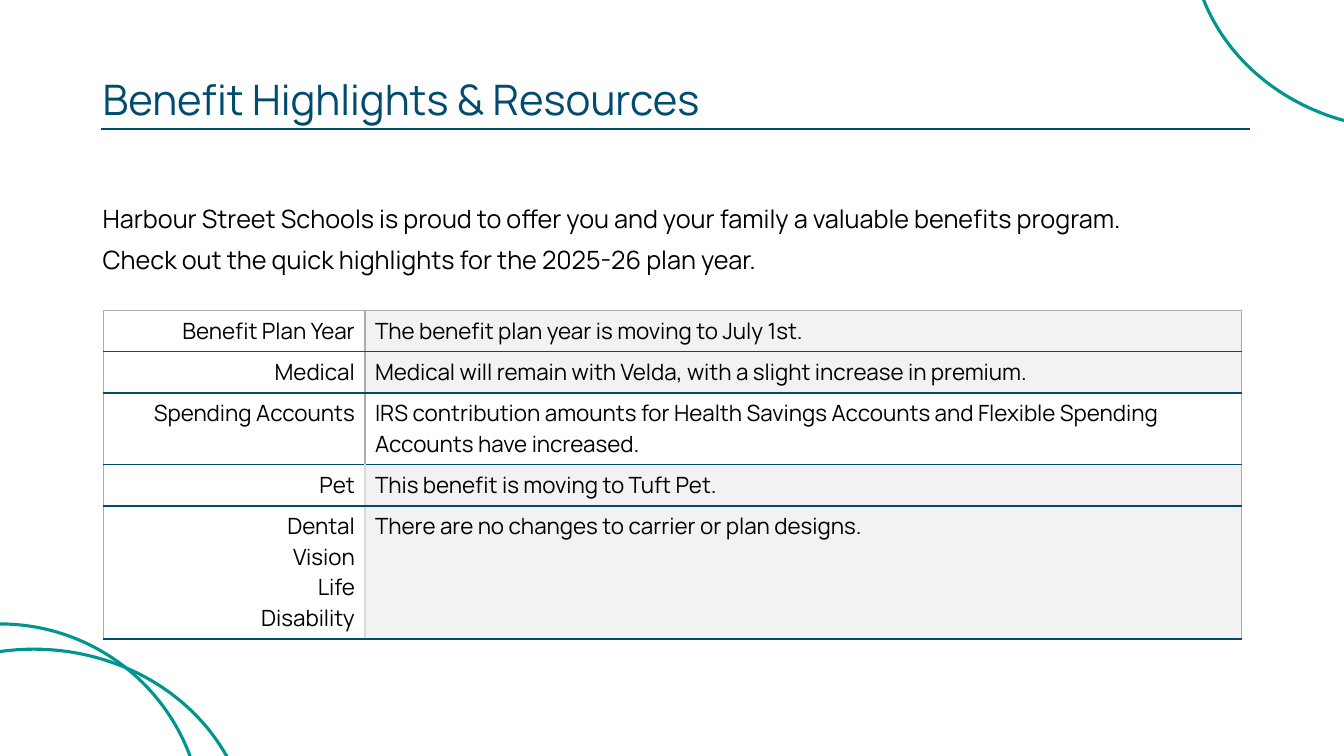
from lxml import etree
from pptx import Presentation
from pptx import util as u
from pptx.dml.color import RGBColor
from pptx.enum import shapes, text
from pptx.oxml.ns import qn

COLORS = {"navy": "004C6C", "teal": "00968F", "black": "000000",
          "grey": "AFABAB", "pale": "D9D9D9", "shade": "F2F2F2"}
FONT = "Manrope"
TITLE = "Benefit Highlights & Resources"
INTRO = [
    "Harbour Street Schools is proud to offer you and your family a valuable benefits program.",
    "Check out the quick highlights for the 2025-26 plan year.",
]
# row height, labels, highlight, highlight is shaded, colour of the divider between them
BENEFITS = [
    (0.41, ["Benefit Plan Year"], "The benefit plan year is moving to July 1st.", True, "grey"),
    (0.41, ["Medical"],
     "Medical will remain with Velda, with a slight increase in premium.", True, "grey"),
    (0.71, ["Spending Accounts"],
     "IRS contribution amounts for Health Savings Accounts and Flexible Spending "
     "Accounts have increased.", False, "grey"),
    (0.41, ["Pet"], "This benefit is moving to Tuft Pet.", True, "pale"),
    (1.32, ["Dental", "Vision", "Life", "Disability"],
     "There are no changes to carrier or plan designs.", True, "pale"),
]
RINGS = [(-2.01, 6.19, 4.02, 4.02), (-1.81, 6.44, 4.29, 3.88), (11.81, -2.6, 4.29, 3.88)]
TABLE_AT = (1.03, 3.08)
COLUMNS = (2.59, 8.69)


def rgb(name):
    return RGBColor.from_string(COLORS[name])


def inches(values):
    return [u.Inches(value) for value in values]


def write(frame, lines, size, color="black", align=text.PP_ALIGN.LEFT, spacing=None, gap=0):
    """Put each line in its own paragraph, with gap points between them."""
    frame.word_wrap = True
    for index, line in enumerate(lines):
        para = frame.add_paragraph() if index else frame.paragraphs[0]
        para.alignment = align
        if spacing:
            para.line_spacing = spacing
        if index and gap:
            para.space_before = u.Pt(gap)
        span = para.add_run()
        span.text = line
        span.font.name = FONT
        span.font.size = u.Pt(size)
        span.font.color.rgb = rgb(color)


def add_rings(page):
    for place in RINGS:
        ring = page.shapes.add_shape(shapes.MSO_SHAPE.OVAL, *inches(place))
        ring.shadow.inherit = False
        ring.fill.background()
        ring.line.color.rgb = rgb("teal")
        ring.line.width = u.Pt(2.25)


def add_heading(page):
    rule = page.shapes.add_connector(shapes.MSO_CONNECTOR.STRAIGHT, *inches((1, 1.28, 12.4, 1.28)))
    rule.line.color.rgb = rgb("navy")
    rule.line.width = u.Pt(1.5)
    etree.SubElement(rule._element.spPr, qn("a:effectLst"))
    box = page.shapes.add_textbox(*inches((0.92, 0.74, 11.5, 0.54)))
    box.text_frame.vertical_anchor = text.MSO_ANCHOR.MIDDLE
    write(box.text_frame, [TITLE], 30, "navy", spacing=0.9)


def add_intro(page):
    box = page.shapes.add_textbox(*inches((0.92, 2, 11.5, 0.9)))
    write(box.text_frame, INTRO, 18, spacing=0.9, gap=10)


def style_cell(cell, edges, shaded):
    """Draw the borders, given as side to colour name, and then the fill."""
    props = cell._tc.get_or_add_tcPr()
    for side in "LRTB":
        line = etree.SubElement(props, qn(f"a:ln{side}"), w=str(u.Pt(1)))
        solid = etree.SubElement(line, qn("a:solidFill"))
        etree.SubElement(solid, qn("a:srgbClr"), val=COLORS[edges[side]])
    if shaded:
        cell.fill.solid()
        cell.fill.fore_color.rgb = rgb("shade")
    else:
        cell.fill.background()


def add_benefits(page):
    size = (sum(COLUMNS), sum(height for height, *_ in BENEFITS))
    table = page.shapes.add_table(len(BENEFITS), len(COLUMNS), *inches(TABLE_AT + size)).table
    table.first_row = table.horz_banding = False
    for column, width in zip(table.columns, COLUMNS):
        column.width = u.Inches(width)
    for index, (height, labels, highlight, shaded, divider) in enumerate(BENEFITS):
        table.rows[index].height = u.Inches(height)
        label_cell, highlight_cell = table.cell(index, 0), table.cell(index, 1)
        write(label_cell.text_frame, labels, 16, align=text.PP_ALIGN.RIGHT)
        write(highlight_cell.text_frame, [highlight], 16)
        edges = {"L": "grey", "R": "grey", "T": "navy" if index else "grey", "B": "navy"}
        style_cell(label_cell, {**edges, "R": divider}, False)
        style_cell(highlight_cell, {**edges, "L": divider}, shaded)


def main():
    deck = Presentation()
    deck.slide_width, deck.slide_height = inches((13.33, 7.5))
    page = deck.slides.add_slide(deck.slide_layouts[6])
    add_rings(page)
    add_heading(page)
    add_intro(page)
    add_benefits(page)
    deck.save("out.pptx")


if __name__ == "__main__":
    main()
